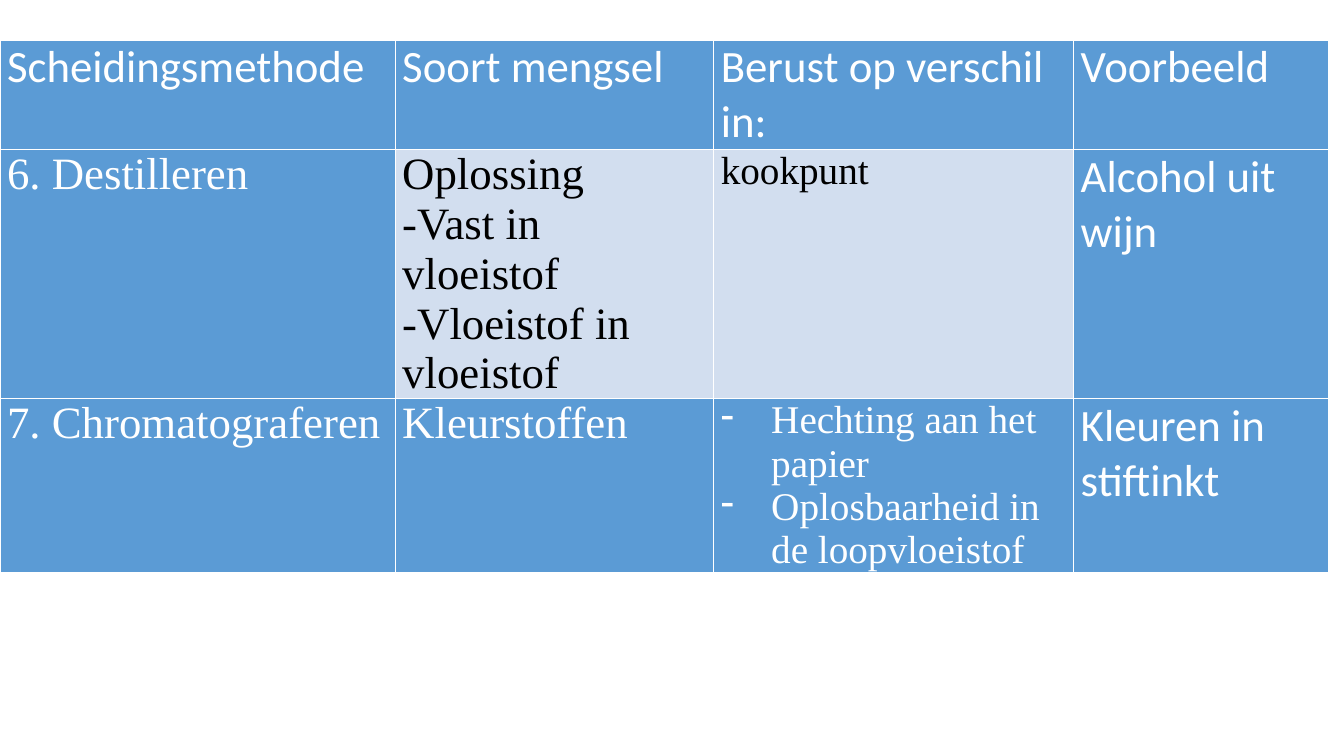
from lxml import etree
from pptx import Presentation
from pptx.dml.color import RGBColor
from pptx.oxml import ns
from pptx.util import Inches, Pt

COLORS = {"blue": "5B9BD5", "pale": "D2DEEF", "white": "FFFFFF", "black": "000000"}
SANS, SERIF = "Calibri", "Times New Roman"
COLS = [3.92, 3.16, 3.57, 2.53]
ROWS = [1.08, 2.47, 1.71]

# Each cell: lines, font, size, fill
HEADS = ["Scheidingsmethode", "Soort mengsel", "Berust op verschil in:", "Voorbeeld"]
CELLS = [
    [([head], SANS, 32, "blue") for head in HEADS],
    [
        (["6. Destilleren"], SERIF, 32, "blue"),
        (["Oplossing", "-Vast in vloeistof", "-Vloeistof in vloeistof"], SERIF, 32, "pale"),
        (["kookpunt"], SERIF, 28, "pale"),
        (["Alcohol uit wijn"], SANS, 32, "blue"),
    ],
    [
        (["7. Chromatograferen"], SERIF, 32, "blue"),
        (["Kleurstoffen"], SERIF, 32, "blue"),
        (["Hechting aan het papier", "Oplosbaarheid in de loopvloeistof"], SERIF, 28, "blue"),
        (["Kleuren in stiftinkt"], SANS, 32, "blue"),
    ],
]
LIST = (2, 2)  # row and column of the dashed list


def color(name):
    return RGBColor.from_string(COLORS[name])


def add_rule(cell):
    """Draw a thin white border on all four sides."""
    props = cell._tc.get_or_add_tcPr()
    for place, side in enumerate(("lnL", "lnR", "lnT", "lnB")):
        line = etree.Element(ns.qn(f"a:{side}"), w=str(Pt(1)))
        fill = etree.SubElement(line, ns.qn("a:solidFill"))
        etree.SubElement(fill, ns.qn("a:srgbClr"), val=COLORS["white"])
        props.insert(place, line)


def add_dash(para):
    """Give a paragraph a dash bullet with a hanging indent."""
    props = para._p.get_or_add_pPr()
    props.set("marL", str(Inches(0.5)))
    props.set("indent", str(-Inches(0.5)))
    etree.SubElement(props, ns.qn("a:buChar"), char="-")


def fill_cell(cell, lines, face, size, back, dashed):
    cell.margin_left = cell.margin_right = Inches(0.07)
    cell.margin_top = cell.margin_bottom = 0
    cell.fill.solid()
    cell.fill.fore_color.rgb = color(back)
    add_rule(cell)
    cell.text_frame.text = "\n".join(lines)
    for para in cell.text_frame.paragraphs:
        if dashed:
            add_dash(para)
        font = para.font
        font.name, font.size, font.bold = face, Pt(size), False
        font.color.rgb = color("black" if back == "pale" else "white")


def add_grid(slide):
    frame = slide.shapes.add_table(len(ROWS), len(COLS), 0, Inches(0.4),
                                   Inches(sum(COLS)), Inches(sum(ROWS)))
    table = frame.table
    table.first_row = table.horz_banding = False
    for col, width in zip(table.columns, COLS):
        col.width = Inches(width)
    for row, height in zip(table.rows, ROWS):
        row.height = Inches(height)
    for r, row in enumerate(CELLS):
        for c, data in enumerate(row):
            fill_cell(table.cell(r, c), *data, dashed=(r, c) == LIST)


def main():
    deck = Presentation()
    deck.slide_width, deck.slide_height = Inches(13.33), Inches(7.5)
    slide = deck.slides.add_slide(deck.slide_layouts[6])
    add_grid(slide)
    deck.save("out.pptx")


if __name__ == "__main__":
    main()
